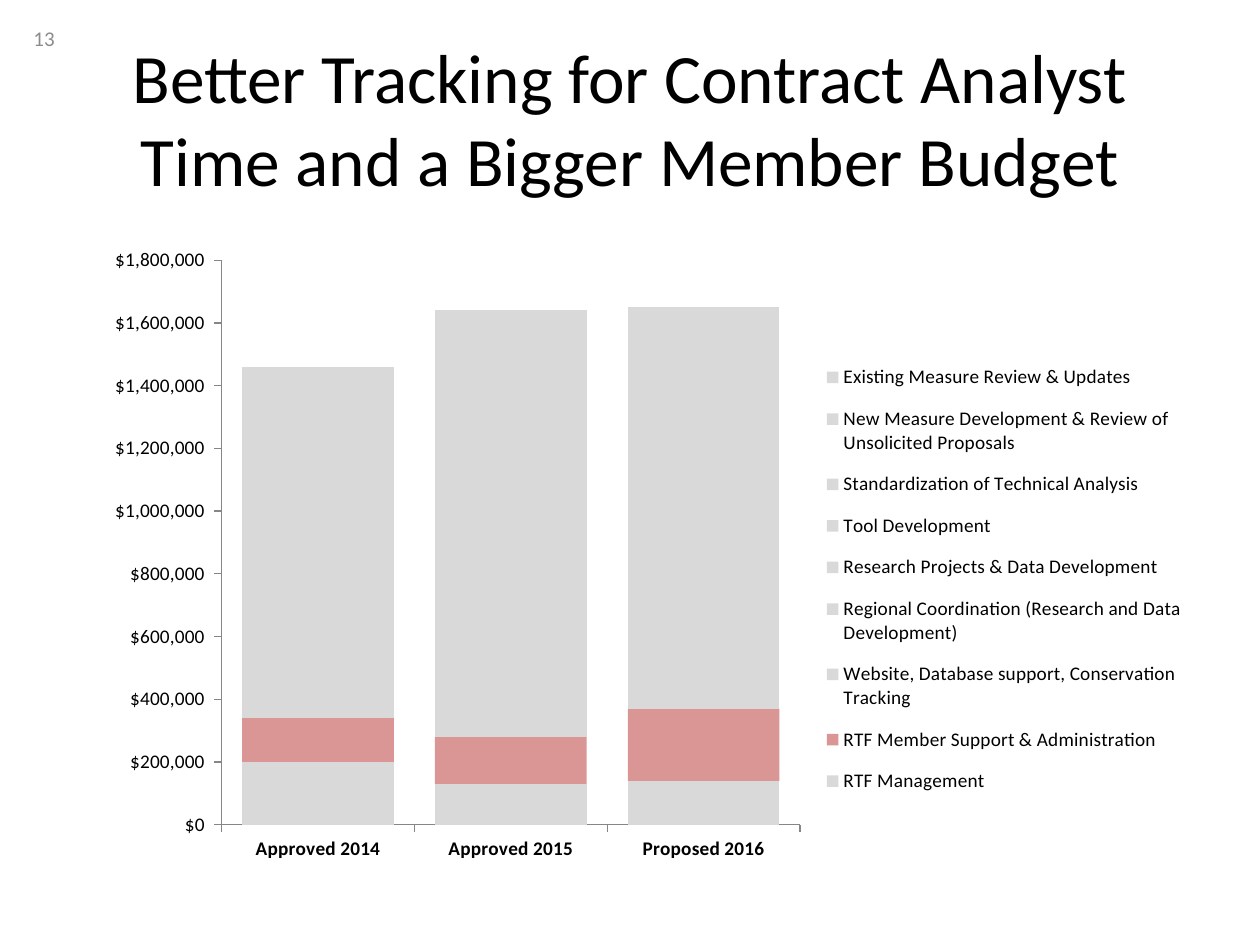
from lxml import etree
from pptx import Presentation, util as u
from pptx.chart.data import CategoryChartData
from pptx.dml.color import RGBColor
from pptx.enum import chart as ch, text
from pptx.oxml.ns import qn

SCALE = 914400 / 126
BLACK = RGBColor(0, 0, 0)
GREY = RGBColor(0x8C, 0x8C, 0x8C)
AXIS = RGBColor(0x86, 0x86, 0x86)
PALE = RGBColor(0xD9, 0xD9, 0xD9)
RED = RGBColor(0xC0, 0x50, 0x4D)
FOCUS = "RTF Member Support & Administration"
YEARS = ["Approved 2014", "Approved 2015", "Proposed 2016"]
COSTS = {
    "RTF Management": (200000, 130000, 140000),
    FOCUS: (140000, 150000, 230000),
    "Website, Database support, Conservation Tracking": (60000, 40000, 80000),
    "Regional Coordination (Research and Data Development)": (20000, 140000, 150000),
    "Research Projects & Data Development": (120000, 40000, 0),
    "Tool Development": (180000, 90000, 70000),
    "Standardization of Technical Analysis": (60000, 110000, 200000),
    "New Measure Development & Review of Unsolicited Proposals": (200000, 400000, 330000),
    "Existing Measure Review & Updates": (480000, 540000, 450000),
}


def px(n):
    return u.Emu(round(n * SCALE))


class Deck:
    """Holds the style and the current slide, and draws each kind of element."""

    def __init__(self, wide, high, face):
        self.prs = Presentation()
        self.prs.slide_width, self.prs.slide_height = px(wide), px(high)
        self.face = face
        self.slide = self.prs.slides.add_slide(self.prs.slide_layouts[6])

    def font(self, font, size, color=BLACK, bold=False):
        font.name, font.size, font.bold = self.face, u.Pt(size), bold
        font.color.rgb = color

    def label(self, box, words, size, color, align):
        frame = self.slide.shapes.add_textbox(*map(px, box)).text_frame
        frame.word_wrap = True
        frame.vertical_anchor = text.MSO_ANCHOR.MIDDLE
        para = frame.paragraphs[0]
        para.alignment = align
        run = para.add_run()
        run.text = words
        self.font(run.font, size, color)

    def place(self, node, index, box, inner=False):
        for old in node.findall(qn("c:layout")):
            node.remove(old)
        layout = etree.Element(qn("c:layout"))
        manual = etree.SubElement(layout, qn("c:manualLayout"))
        parts = [("layoutTarget", "inner")] if inner else []
        parts += [("xMode", "edge"), ("yMode", "edge"), *zip("xywh", box)]
        for name, val in parts:
            etree.SubElement(manual, qn("c:" + name)).set("val", str(val))
        node.insert(index, layout)

    def axis(self, axis, bold=False):
        axis.has_major_gridlines = False
        axis.major_tick_mark = ch.XL_TICK_MARK.OUTSIDE
        axis.format.line.color.rgb = AXIS
        axis.format.line.width = u.Pt(0.75)
        self.font(axis.tick_labels.font, 11, bold=bold)

    def stack(self, box, cats, rows, focus):
        data = CategoryChartData()
        data.categories = cats
        for name, vals in rows.items():
            data.add_series(name, vals)
        kind = ch.XL_CHART_TYPE.COLUMN_STACKED
        chart = self.slide.shapes.add_chart(kind, *map(px, box), data).chart
        chart.has_title = False
        self.font(chart.font, 10)
        plot = chart.plots[0]
        plot.gap_width, plot.overlap = 27, 100
        plot.vary_by_categories = False
        for ser in plot.series:
            fill = ser.format.fill
            fill.solid()
            fill.fore_color.rgb = RED if ser.name == focus else PALE
            if ser.name == focus:
                tone = next(ser.format.fill._xPr.iter(qn("a:srgbClr")))
                etree.SubElement(tone, qn("a:alpha")).set("val", "60000")
            ser.format.line.fill.background()
        self.axis(chart.category_axis, bold=True)
        self.axis(chart.value_axis)
        chart.value_axis.minimum_scale = 0
        chart.value_axis.maximum_scale = 1800000
        chart.value_axis.major_unit = 200000
        ticks = chart.value_axis.tick_labels
        ticks.number_format = '"$"#,##0_);\\("$"#,##0\\)'
        ticks.number_format_is_linked = False
        chart.has_legend = True
        key = chart.legend
        key.position = ch.XL_LEGEND_POSITION.RIGHT
        key.include_in_layout = False
        self.font(key.font, 11)
        self.place(key._element, 1, (0.67, 0.19, 0.32, 0.69))
        area = chart._chartSpace.chart.plotArea
        self.place(area, 0, (0.14, 0.06, 0.51, 0.84), inner=True)


def main():
    deck = Deck(1260, 945, "Calibri")
    deck.label((63, 38, 1134, 158), "Better Tracking for Contract Analyst Time and a Bigger Member Budget",
               39.6, BLACK, text.PP_ALIGN.CENTER)
    deck.label((21, 13, 294, 50), "13", 12, GREY, text.PP_ALIGN.LEFT)
    deck.stack((63, 220, 1134, 672), YEARS, COSTS, FOCUS)
    deck.prs.save("out.pptx")


if __name__ == "__main__":
    main()
